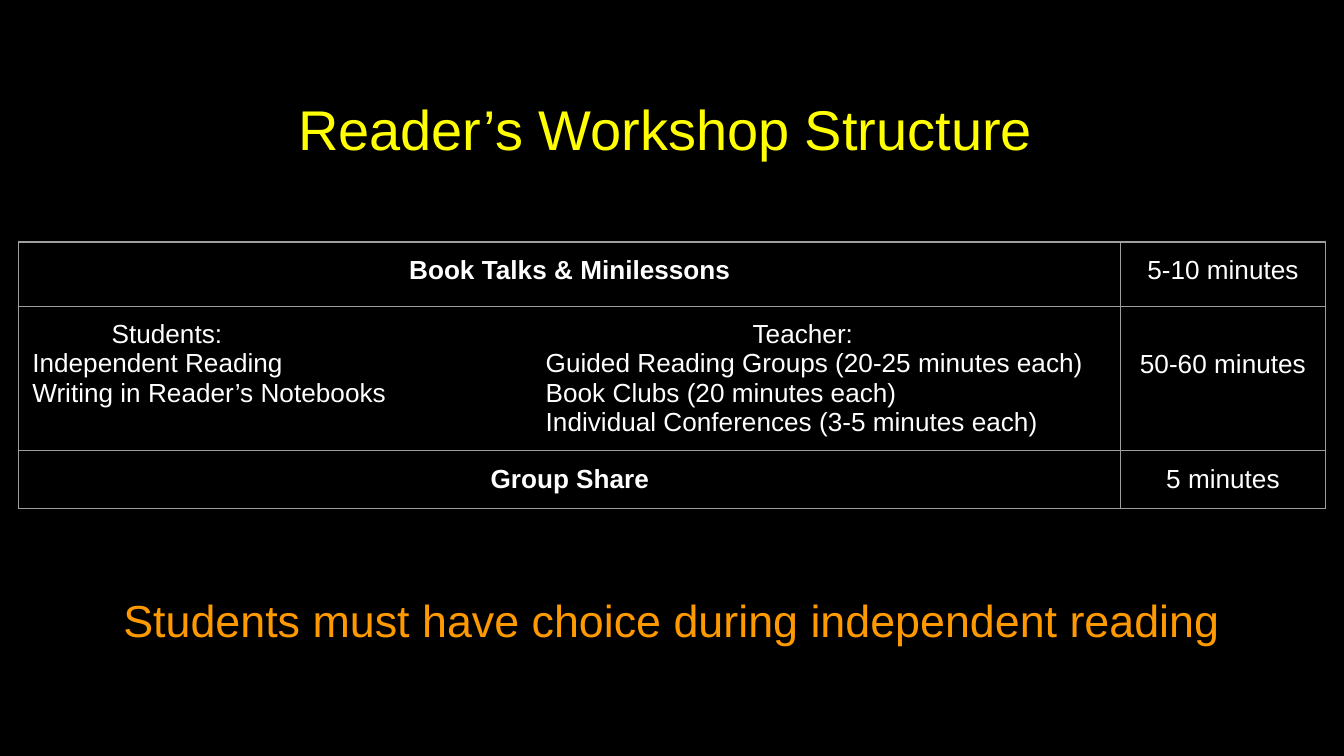
"""Build the Reader's Workshop Structure slide."""
from dataclasses import dataclass
from typing import Optional

import pptx
import pptx.dml.color
import pptx.enum.text
import pptx.oxml
import pptx.oxml.ns
import pptx.util

Inches = pptx.util.Inches
Align = pptx.enum.text.PP_ALIGN
Anchor = pptx.enum.text.MSO_ANCHOR


@dataclass(frozen=True)
class Theme:
    """Colours, type sizes and measures of the slide."""
    font: str = "Arial"
    back: str = "000000"
    title: str = "FFFF00"
    body: str = "FFFFFF"
    accent: str = "FF9900"
    border: str = "9E9E9E"
    border_pt: float = 0.75
    title_pt: int = 30
    body_pt: int = 14
    accent_pt: int = 24
    inset: float = 0.1


@dataclass(frozen=True)
class Stage:
    """One row of the workshop: activity lines, time and row height."""
    lines: tuple[str, ...]
    time: str
    height: float
    bold: bool = True
    align: Align = Align.CENTER
    time_top: float = 0.1


THEME = Theme()
WIDTH = 10
HEIGHT = WIDTH * 9 / 16
COLUMNS = (8.2, 1.52)
HEADING_TABS = (0.59, 5.36)
ITEM_TABS = (3.82,)
STAGES = (
    Stage(("Book Talks & Minilessons",), "5-10 minutes", 0.48),
    Stage(
        (
            "\tStudents:\tTeacher:",
            "Independent Reading\tGuided Reading Groups (20-25 minutes each)",
            "Writing in Reader’s Notebooks\tBook Clubs (20 minutes each)",
            "\tIndividual Conferences (3-5 minutes each)",
        ),
        "50-60 minutes", 1.07, bold=False, align=Align.LEFT, time_top=0.32,
    ),
    Stage(("Group Share",), "5 minutes", 0.43),
)


def rgb(value: str) -> pptx.dml.color.RGBColor:
    """Turn a hex string into a colour."""
    return pptx.dml.color.RGBColor.from_string(value)


def write(p, text: str, *, size: int = THEME.body_pt, color: str = THEME.body,
          bold: bool = False, align: Align = Align.CENTER,
          tabs: tuple[float, ...] = ()) -> None:
    """Write formatted text into a paragraph."""
    p.alignment = align
    r = p.add_run()
    r.text = text
    r.font.name = THEME.font
    r.font.size = pptx.util.Pt(size)
    r.font.bold = bold
    r.font.color.rgb = rgb(color)
    if tabs:
        stops = "".join(f'<a:tab pos="{Inches(t)}" algn="l"/>' for t in tabs)
        p._p.get_or_add_pPr().append(pptx.oxml.parse_xml(
            f'<a:tabLst {pptx.oxml.ns.nsdecls("a")}>{stops}</a:tabLst>'))


def set_insets(box, top: Optional[float] = None) -> None:
    """Give a text frame or cell its inner margins."""
    box.margin_left = box.margin_right = box.margin_bottom = Inches(THEME.inset)
    box.margin_top = Inches(THEME.inset if top is None else top)


def place(sp, left: float, top: float, width: float, height: float,
          anchor: Anchor):
    """Position a text shape and return its first paragraph."""
    sp.left, sp.top, sp.width, sp.height = map(Inches, (left, top, width, height))
    tf = sp.text_frame
    tf.word_wrap = True
    tf.auto_size = pptx.enum.text.MSO_AUTO_SIZE.NONE
    tf.vertical_anchor = anchor
    set_insets(tf)
    return tf.paragraphs[0]


def style_cell(cell, top: Optional[float] = None) -> None:
    """Give a cell its borders, fill and margins."""
    tc_pr = cell._tc.get_or_add_tcPr()
    for side in ("lnL", "lnR", "lnT", "lnB"):
        tc_pr.append(pptx.oxml.parse_xml(
            f'<a:{side} {pptx.oxml.ns.nsdecls("a")} '
            f'w="{pptx.util.Pt(THEME.border_pt)}"><a:solidFill>'
            f'<a:srgbClr val="{THEME.border}"/></a:solidFill></a:{side}>'))
    cell.fill.background()
    cell.vertical_anchor = Anchor.TOP
    set_insets(cell, top)


def add_schedule(s, stages: tuple[Stage, ...], left: float, top: float) -> None:
    """Add the table of workshop stages."""
    table = s.shapes.add_table(
        len(stages), len(COLUMNS), Inches(left), Inches(top),
        Inches(sum(COLUMNS)), Inches(sum(g.height for g in stages))).table
    table.first_row = table.horz_banding = False
    for column, width in zip(table.columns, COLUMNS):
        column.width = Inches(width)
    for row, stage in zip(table.rows, stages):
        row.height = Inches(stage.height)
        activity, time = row.cells
        style_cell(activity)
        style_cell(time, stage.time_top)
        tf = activity.text_frame
        for i, line in enumerate(stage.lines):
            p = tf.add_paragraph() if i else tf.paragraphs[0]
            tabs = (HEADING_TABS, ITEM_TABS)[min(i, 1)] if "\t" in line else ()
            write(p, line, bold=stage.bold, align=stage.align, tabs=tabs)
        write(time.text_frame.paragraphs[0], stage.time)


def main() -> None:
    """Build and save the slide."""
    prs = pptx.Presentation()
    prs.slide_width, prs.slide_height = Inches(WIDTH), Inches(HEIGHT)
    s = prs.slides.add_slide(prs.slide_layouts[5])
    s.background.fill.solid()
    s.background.fill.fore_color.rgb = rgb(THEME.back)
    write(place(s.shapes.title, 0.04, 0.36, 9.82, 0.94, Anchor.BOTTOM),
          "Reader’s Workshop Structure", size=THEME.title_pt, color=THEME.title)
    add_schedule(s, STAGES, 0.14, 1.8)
    sp = s.shapes.add_textbox(0, 0, 0, 0)
    write(place(sp, 0.59, 4.31, 8.81, 0.94, Anchor.TOP),
          "Students must have choice during independent reading",
          size=THEME.accent_pt, color=THEME.accent)
    prs.save("out.pptx")


if __name__ == "__main__":
    main()
